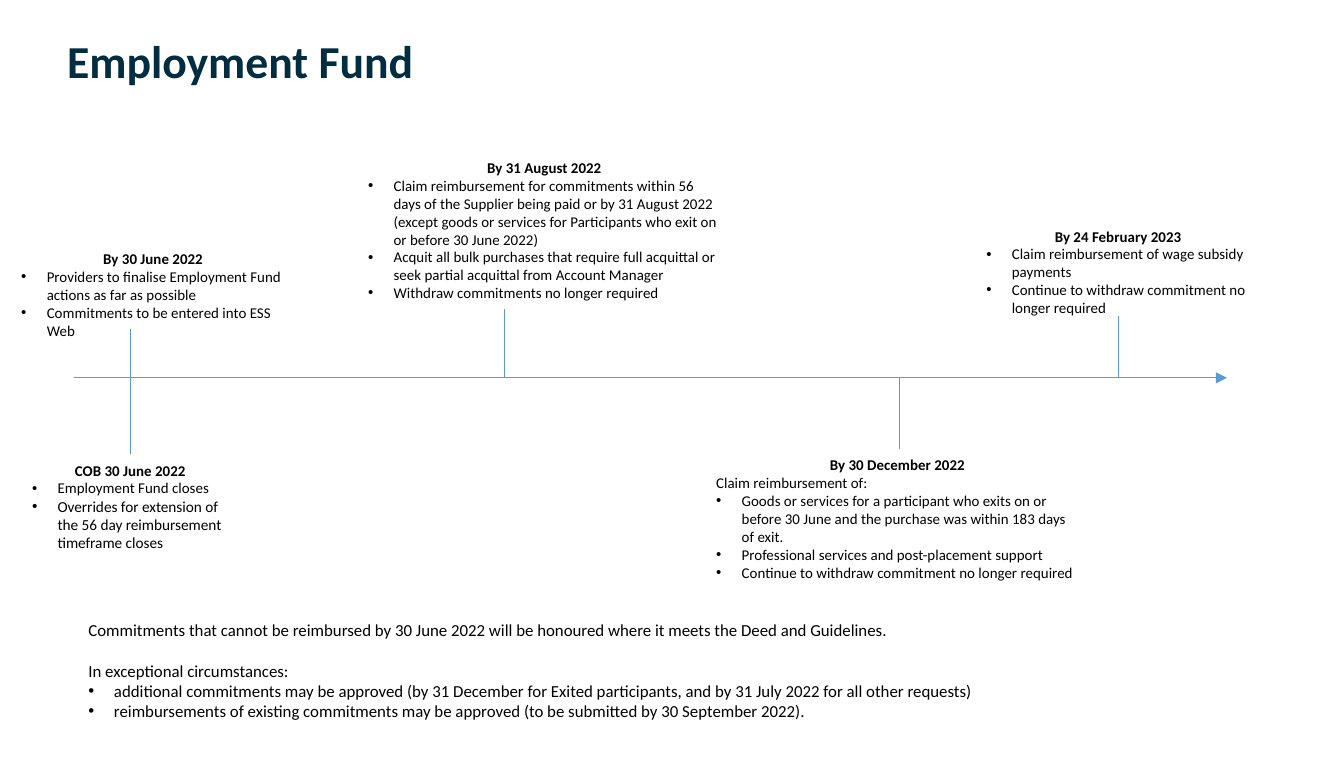
from lxml import etree
from pptx import Presentation
from pptx.dml.color import RGBColor
from pptx.enum.shapes import MSO_CONNECTOR
from pptx.enum.text import MSO_ANCHOR, MSO_AUTO_SIZE, PP_ALIGN
from pptx.oxml.ns import qn
from pptx.util import Inches, Pt

STRAIGHT = MSO_CONNECTOR.STRAIGHT
TOP = MSO_ANCHOR.TOP
NO_FIT, GROW = MSO_AUTO_SIZE.NONE, MSO_AUTO_SIZE.SHAPE_TO_FIT_TEXT
LEFT, CENTER = PP_ALIGN.LEFT, PP_ALIGN.CENTER

NAVY = RGBColor(0x00, 0x2D, 0x3F)
BLACK = RGBColor(0x00, 0x00, 0x00)
BLUE = RGBColor(0x5B, 0x9B, 0xD5)

FONT = "Calibri"
AXIS_Y = 2.81
INDENT = 0.19
TOP_SITE = 0

MILESTONES = [
    {
        "box": (0.06, 1.81, 2.16, 0.77),
        "heading": "By 30 June 2022",
        "bullets": [
            "Providers to finalise Employment Fund actions as far as possible",
            "Commitments to be entered into ESS Web",
        ],
        "stem": (0.97, 2.45),
    },
    {
        "box": (0.14, 3.38, 1.66, 0.92),
        "heading": "COB 30 June 2022",
        "bullets": [
            "Employment Fund closes",
            ("Overrides for extension of the 56 day reimbursement timeframe closes", 8.2),
        ],
    },
    {
        "box": (2.64, 1.13, 2.82, 1.18),
        "heading": "By 31 August 2022",
        "bullets": [
            "Claim reimbursement for commitments within 56 days of the Supplier being paid "
            "or by 31 August 2022 (except goods or services for Participants who exit on or "
            "before 30 June 2022)",
            "Acquit all bulk purchases that require full acquittal or seek partial acquittal "
            "from Account Manager",
            "Withdraw commitments no longer required",
        ],
        "stem": (3.75, 2.3),
    },
    {
        "box": (5.23, 3.34, 2.92, 1.31),
        "heading": "By 30 December 2022 ",
        "lead": "Claim reimbursement of:",
        "bullets": [
            "Goods or services for a participant who exits on or before 30 June and the "
            "purchase was within 183 days of exit.",
            "Professional services and post-placement support",
            "Continue to withdraw commitment no longer required",
        ],
    },
    {
        "box": (7.24, 1.64, 2.16, 0.77),
        "heading": "By 24 February 2023",
        "bullets": [
            "Claim reimbursement of wage subsidy payments",
            "Continue to withdraw commitment no longer required",
        ],
        "stem": (8.32, 2.35),
    },
]


def set_attributes(target, values):
    """Set every attribute named in a dict of format values."""
    for name, value in values.items():
        setattr(target, name, value)


def add_bullet(paragraph):
    """Give a paragraph a hanging round bullet."""
    properties = paragraph._p.get_or_add_pPr()
    properties.set("marL", str(Inches(INDENT)))
    properties.set("indent", str(-Inches(INDENT)))
    etree.SubElement(properties, qn("a:buFont")).set("typeface", "Arial")
    etree.SubElement(properties, qn("a:buChar")).set("char", "•")


def write_paragraph(frame, text, size, bold=False, bullet=False, alignment=LEFT, gap=0):
    """Append a formatted paragraph, filling the empty first one if there is one."""
    paragraph = frame.add_paragraph() if frame.text else frame.paragraphs[0]
    if gap:
        paragraph.space_before = Pt(gap)
    if bullet:
        add_bullet(paragraph)
    paragraph.text = text
    paragraph.alignment = alignment
    set_attributes(paragraph.font, {"name": FONT, "size": Pt(size), "bold": bold})
    paragraph.font.color.rgb = BLACK


def add_text_box(slide, box):
    """Add a wrapping text box that grows with its text."""
    shape = slide.shapes.add_textbox(*map(Inches, box))
    set_attributes(shape.text_frame, {"word_wrap": True, "auto_size": GROW})
    return shape


def add_line(slide, start, end, arrow=False):
    """Add a thin blue line, with an arrowhead at its end if asked."""
    connector = slide.shapes.add_connector(STRAIGHT, *map(Inches, start + end))
    connector.line.color.rgb = BLUE
    connector.line.width = Pt(0.5)
    if arrow:
        etree.SubElement(connector.line._get_or_add_ln(), qn("a:tailEnd")).set("type", "triangle")
    etree.SubElement(connector._element.spPr, qn("a:effectLst"))
    return connector


def add_milestone(slide, milestone):
    """Add a dated text box and the stem that ties it to the axis."""
    shape = add_text_box(slide, milestone["box"])
    frame = shape.text_frame
    write_paragraph(frame, milestone["heading"], 8, bold=True, alignment=CENTER)
    if "lead" in milestone:
        write_paragraph(frame, milestone["lead"], 8)
    for bullet in milestone["bullets"]:
        text, size = bullet if isinstance(bullet, tuple) else (bullet, 8)
        write_paragraph(frame, text, size, bullet=True)

    left, top, width, _ = milestone["box"]
    start = milestone.get("stem", (left + width / 2, top))
    stem = add_line(slide, start, (start[0], AXIS_Y))
    if "stem" not in milestone:
        stem.begin_connect(shape, TOP_SITE)


def add_title(slide, text):
    """Place and format the title placeholder."""
    title = slide.shapes.title
    box = {"left": 0.5, "top": 0.24, "width": 8.91, "height": 0.75}
    set_attributes(title, {name: Inches(value) for name, value in box.items()})
    set_attributes(title.text_frame, {
        "text": text, "word_wrap": True, "auto_size": NO_FIT, "vertical_anchor": TOP,
        "margin_left": 0, "margin_right": 0, "margin_top": Inches(0.05), "margin_bottom": 0,
    })
    paragraph = title.text_frame.paragraphs[0]
    set_attributes(paragraph, {"alignment": LEFT, "line_spacing": 0.9})
    set_attributes(paragraph.font, {"name": FONT, "size": Pt(24.5), "bold": True})
    paragraph.font.color.rgb = NAVY


def add_notice(slide):
    """Add the conditions below the timeline."""
    frame = add_text_box(slide, (0.56, 4.56, 8.36, 0.85)).text_frame
    write_paragraph(frame, "Commitments that cannot be reimbursed by 30 June 2022 will be "
                    "honoured where it meets the Deed and Guidelines.", 9)
    write_paragraph(frame, "In exceptional circumstances:", 9, gap=11)
    for text in (
        "additional commitments may be approved (by 31 December for Exited participants, "
        "and by 31 July 2022 for all other requests)",
        "reimbursements of existing commitments may be approved "
        "(to be submitted by 30 September 2022).",
    ):
        write_paragraph(frame, text, 9, bullet=True)


def main():
    """Build the Employment Fund timeline slide."""
    presentation = Presentation()
    presentation.slide_width = Inches(10)
    presentation.slide_height = Inches(5.63)
    slide = presentation.slides.add_slide(presentation.slide_layouts[5])
    add_title(slide, "Employment Fund")
    add_line(slide, (0.55, AXIS_Y), (9.13, AXIS_Y), arrow=True)
    for milestone in MILESTONES:
        add_milestone(slide, milestone)
    add_notice(slide)
    presentation.save("out.pptx")


if __name__ == "__main__":
    main()
